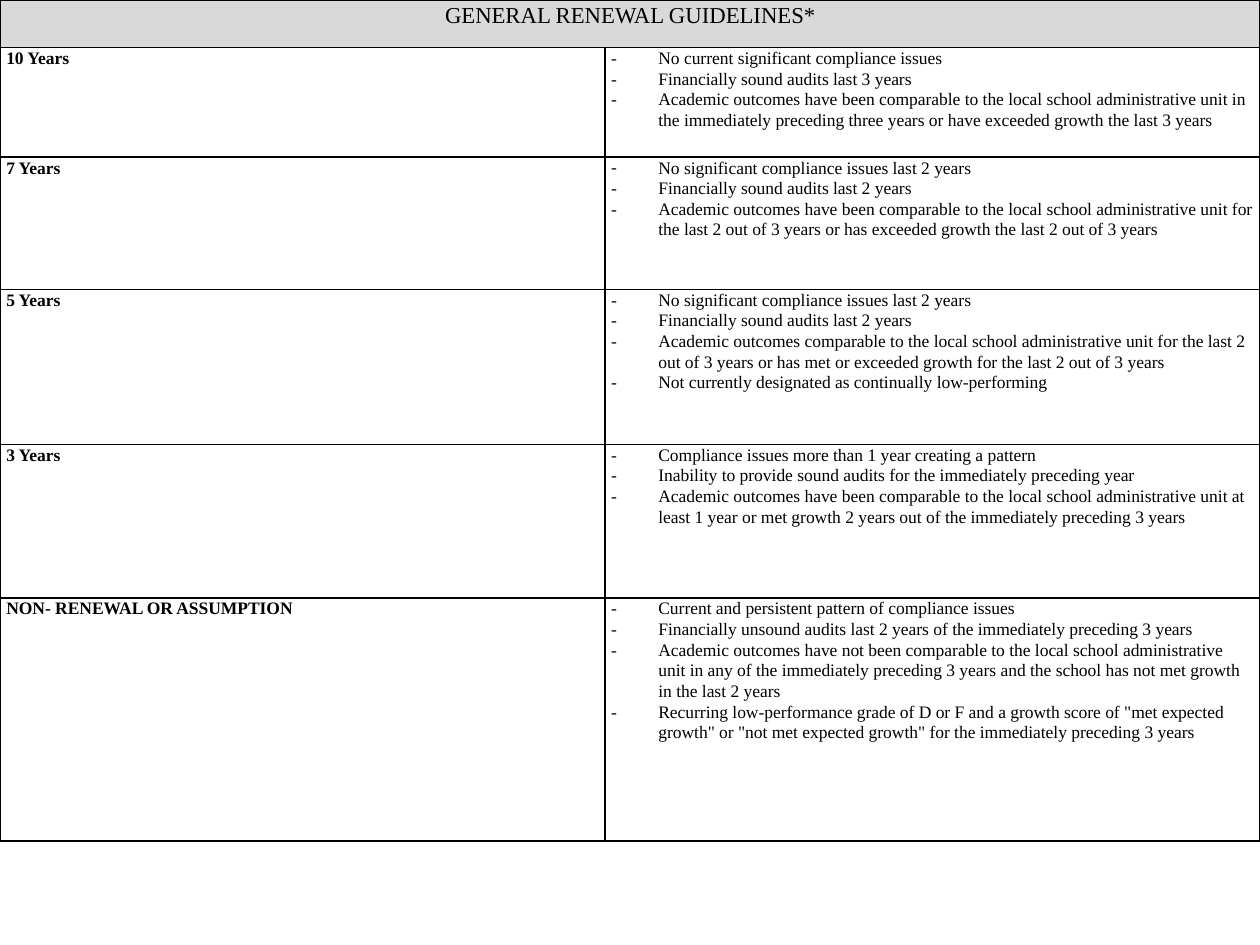
from pptx import Presentation
from pptx.dml.color import RGBColor
from pptx.enum.text import PP_ALIGN as Align
from pptx.oxml.ns import qn
from pptx.util import Pt
from lxml.etree import SubElement

GUIDELINES = [
    ("10 Years", 62.64, [
        "No current significant compliance issues",
        "Financially sound audits last 3 years",
        "Academic outcomes have been comparable to the local school administrative unit in the immediately preceding three years or have exceeded growth the last 3 years",
    ]),
    ("7 Years", 75.6, [
        "No significant compliance issues last 2 years",
        "Financially sound audits last 2 years",
        "Academic outcomes have been comparable to the local school administrative unit for the last 2 out of 3 years or has exceeded growth the last 2 out of 3 years",
    ]),
    ("5 Years", 88.5, [
        "No significant compliance issues last 2 years",
        "Financially sound audits last 2 years",
        "Academic outcomes comparable to the local school administrative unit for the last 2 out of 3 years or has met or exceeded growth for the last 2 out of 3 years",
        "Not currently designated as continually low-performing",
    ]),
    ("3 Years", 87.9, [
        "Compliance issues more than 1 year creating a pattern",
        "Inability to provide sound audits for the immediately preceding year",
        "Academic outcomes have been comparable to the local school administrative unit at least 1 year or met growth 2 years out of the immediately preceding 3 years",
    ]),
    ("NON- RENEWAL OR ASSUMPTION", 138.9, [
        "Current and persistent pattern of compliance issues",
        "Financially unsound audits last 2 years of the immediately preceding 3 years",
        "Academic outcomes have not been comparable to the local school administrative unit in any of the immediately preceding 3 years and the school has not met growth in the last 2 years",
        'Recurring low-performance grade of D or F and a growth score of "met expected growth" or "not met expected growth" for the immediately preceding 3 years',
    ]),
]
HEADING_HEIGHT = 27.2
TERM_WIDTH, CRITERIA_WIDTH = 345.6, 374.4


def color(value):
    return RGBColor.from_string(value)


class GuidelineSlide:
    font = "Times New Roman"
    ink = "000000"
    indent = Pt(27)

    def __init__(self, deck):
        self.slide = deck.slides.add_slide(deck.slide_layouts[6])

    def table(self, widths, heights):
        frame = self.slide.shapes.add_table(
            len(heights), len(widths), 0, 0, Pt(sum(widths)), Pt(sum(heights)))
        grid = frame.table
        grid.first_row = grid.horz_banding = False
        for column, width in zip(grid.columns, widths):
            column.width = Pt(width)
        for row, height in zip(grid.rows, heights):
            row.height = Pt(height)
        for cell in grid.iter_cells():
            self.frame_cell(cell)
        return grid

    def frame_cell(self, cell):
        cell.margin_left = cell.margin_right = Pt(3.6)
        cell.margin_top = cell.margin_bottom = 0
        properties = cell._tc.get_or_add_tcPr()
        for side in ("a:lnL", "a:lnR", "a:lnT", "a:lnB"):
            border = SubElement(properties, qn(side), w=str(Pt(1)))
            fill = SubElement(border, qn("a:solidFill"))
            SubElement(fill, qn("a:srgbClr"), val=self.ink)
        cell.fill.background()

    def add_text(self, paragraph, text, size=10, bold=False, spacing=1.07):
        paragraph.line_spacing = spacing
        run = paragraph.add_run()
        run.text = text
        run.font.name = self.font
        run.font.size = Pt(size)
        run.font.bold = bold
        run.font.color.rgb = color(self.ink)

    def heading(self, cell, text):
        cell.fill.solid()
        cell.fill.fore_color.rgb = color("D9D9D9")
        paragraph = cell.text_frame.paragraphs[0]
        paragraph.alignment = Align.CENTER
        paragraph.space_after = Pt(10)
        self.add_text(paragraph, text, size=13, spacing=1.15)

    def term(self, cell, text):
        self.add_text(cell.text_frame.paragraphs[0], text, bold=True)

    def criteria(self, cell, items):
        body = cell.text_frame
        for index, item in enumerate(items):
            paragraph = body.add_paragraph() if index else body.paragraphs[0]
            properties = paragraph._p.get_or_add_pPr()
            properties.set("marL", str(self.indent))
            properties.set("indent", str(-self.indent))
            SubElement(properties, qn("a:buFont"), typeface=self.font)
            SubElement(properties, qn("a:buChar"), char="-")
            self.add_text(paragraph, item)


def main():
    deck = Presentation()
    deck.slide_width, deck.slide_height = Pt(720), Pt(540)
    page = GuidelineSlide(deck)
    heights = [HEADING_HEIGHT] + [height for _, height, _ in GUIDELINES]
    grid = page.table([TERM_WIDTH, CRITERIA_WIDTH], heights)
    grid.cell(0, 0).merge(grid.cell(0, 1))
    page.heading(grid.cell(0, 0), "GENERAL RENEWAL GUIDELINES*")
    for row, (term, _, items) in enumerate(GUIDELINES, start=1):
        page.term(grid.cell(row, 0), term)
        page.criteria(grid.cell(row, 1), items)
    deck.save("out.pptx")


if __name__ == "__main__":
    main()
